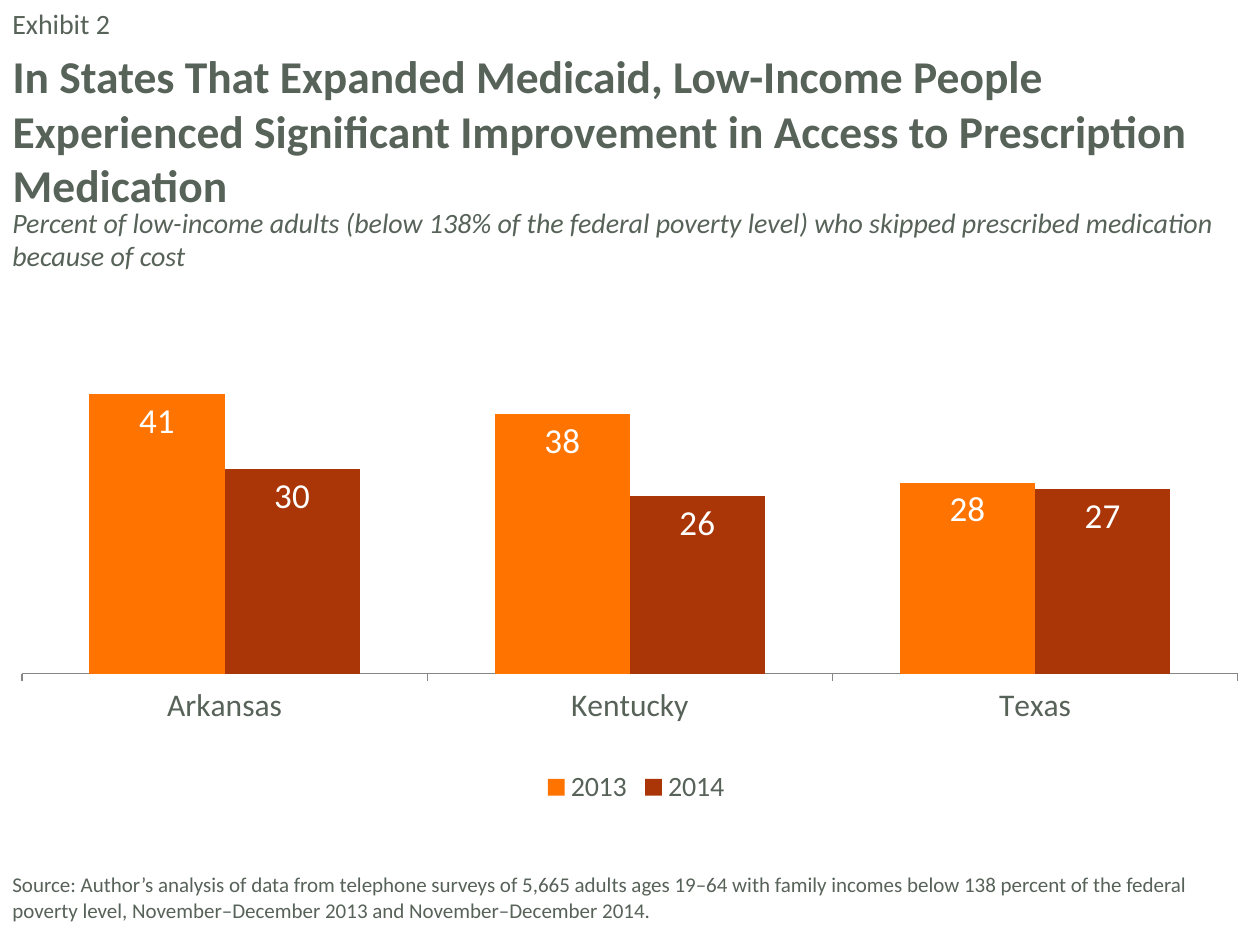
from dataclasses import dataclass

from lxml import etree
from pptx import Presentation
from pptx import util as u
from pptx.chart.data import CategoryChartData
from pptx.dml.color import RGBColor
from pptx.enum import chart as ch
from pptx.enum import text as tx
from pptx.oxml.ns import qn

FONT = "Calibri"
COLOURS = {
    "text": "576258",
    "axis": "868686",
    "label": "FFFFFF",
    "2013": "FF7300",
    "2014": "AA3607",
}
STATES = ["Arkansas", "Kentucky", "Texas"]


@dataclass(frozen=True)
class Area:
    """A rectangle in centimetres."""
    left: float
    top: float
    width: float
    height: float

    def lengths(self) -> tuple:
        return tuple(map(u.Cm, (self.left, self.top, self.width, self.height)))


@dataclass(frozen=True)
class Year:
    name: str
    values: tuple
    label_format: str


YEARS = [
    Year("2013", (41, 38, 28), "0"),
    Year("2014", (30, 26, 27), r"#,##0;\(#,##0\)"),
]


def colour(name: str) -> RGBColor:
    return RGBColor.from_string(COLOURS[name])


def format_font(font, size: float, name: str = "text",
                bold: bool = False, italic: bool = False) -> None:
    font.name = FONT
    font.size = u.Pt(size)
    font.bold = bold
    font.italic = italic
    font.color.rgb = colour(name)


def write_text(box, content: str, area: Area, *, size: float,
               bold: bool = False, italic: bool = False, grow: bool = False,
               anchor=tx.MSO_ANCHOR.TOP) -> None:
    box.left, box.top, box.width, box.height = area.lengths()
    frame = box.text_frame
    frame.word_wrap = True
    frame.auto_size = (tx.MSO_AUTO_SIZE.SHAPE_TO_FIT_TEXT if grow
                       else tx.MSO_AUTO_SIZE.NONE)
    frame.vertical_anchor = anchor
    para = frame.paragraphs[0]
    para.alignment = tx.PP_ALIGN.LEFT
    span = para.add_run()
    span.text = content
    format_font(span.font, size, bold=bold, italic=italic)


def add_text(page, content: str, area: Area, **style) -> None:
    box = page.shapes.add_textbox(*area.lengths())
    write_text(box, content, area, **style)


def set_inner_plot(chart, width: float, height: float) -> None:
    """Pin the plot's inner area to the top left, as fractions of the chart."""
    plot_area = chart.plots[0]._element.getparent()
    for old in plot_area.findall(qn("c:layout")):
        plot_area.remove(old)
    layout = etree.Element(qn("c:layout"))
    manual = etree.SubElement(layout, qn("c:manualLayout"))
    settings = {"layoutTarget": "inner", "xMode": "edge", "yMode": "edge",
                "x": 0, "y": 0, "w": width, "h": height}
    for tag, value in settings.items():
        etree.SubElement(manual, qn(f"c:{tag}")).set("val", str(value))
    plot_area.insert(0, layout)


def add_column_chart(page, area: Area) -> None:
    data = CategoryChartData()
    data.categories = STATES
    for year in YEARS:
        data.add_series(year.name, year.values)
    chart = page.shapes.add_chart(
        ch.XL_CHART_TYPE.COLUMN_CLUSTERED, *area.lengths(), data).chart
    format_font(chart.font, 16)
    chart.has_title = False
    chart.has_legend = True
    chart.legend.position = ch.XL_LEGEND_POSITION.BOTTOM
    chart.legend.include_in_layout = True
    format_font(chart.legend.font, 16)

    states = chart.category_axis
    states.major_tick_mark = ch.XL_TICK_MARK.OUTSIDE
    states.format.line.color.rgb = colour("axis")
    states.format.line.width = u.Pt(0.75)
    format_font(states.tick_labels.font, 18)
    percent = chart.value_axis
    percent.visible = False
    percent.has_major_gridlines = False
    percent.minimum_scale, percent.maximum_scale = 0, 60
    percent.major_unit = 10

    plot = chart.plots[0]
    plot.gap_width = 100
    plot.overlap = 0
    plot.vary_by_categories = False
    for year, series in zip(YEARS, plot.series):
        series.format.fill.solid()
        series.format.fill.fore_color.rgb = colour(year.name)
        labels = series.data_labels
        labels.show_value = True
        labels.position = ch.XL_LABEL_POSITION.INSIDE_END
        labels.number_format = year.label_format
        labels.number_format_is_linked = False
        format_font(labels.font, 20, "label")
    set_inner_plot(chart, 0.99, 0.75)


def main() -> None:
    deck = Presentation()
    deck.slide_width, deck.slide_height = u.Cm(25.4), u.Cm(19.05)
    page = deck.slides.add_slide(deck.slide_layouts.get_by_name("Title Only"))

    add_column_chart(page, Area(0.43, 5.33, 24.77, 11))
    write_text(page.shapes.title,
               "In States That Expanded Medicaid, Low-Income People Experienced "
               "Significant Improvement in Access to Prescription Medication",
               Area(0, 0.84, 25.4, 2.49), size=26, bold=True, grow=True)
    add_text(page, "Exhibit 2", Area(0, 0, 25.4, 0.84), size=16)
    add_text(page,
             "Source: Author’s analysis of data from telephone surveys of 5,665 "
             "adults ages 19–64 with family incomes below 138 percent of the "
             "federal poverty level, November–December 2013 and "
             "November–December 2014.",
             Area(0, 17.02, 24.97, 1.7), size=12, anchor=tx.MSO_ANCHOR.BOTTOM)
    add_text(page,
             "Percent of low-income adults (below 138% of the federal poverty "
             "level) who skipped prescribed medication because of cost",
             Area(0, 4.01, 24.97, 1.63), size=16, italic=True, grow=True)
    deck.save("out.pptx")


if __name__ == "__main__":
    main()
